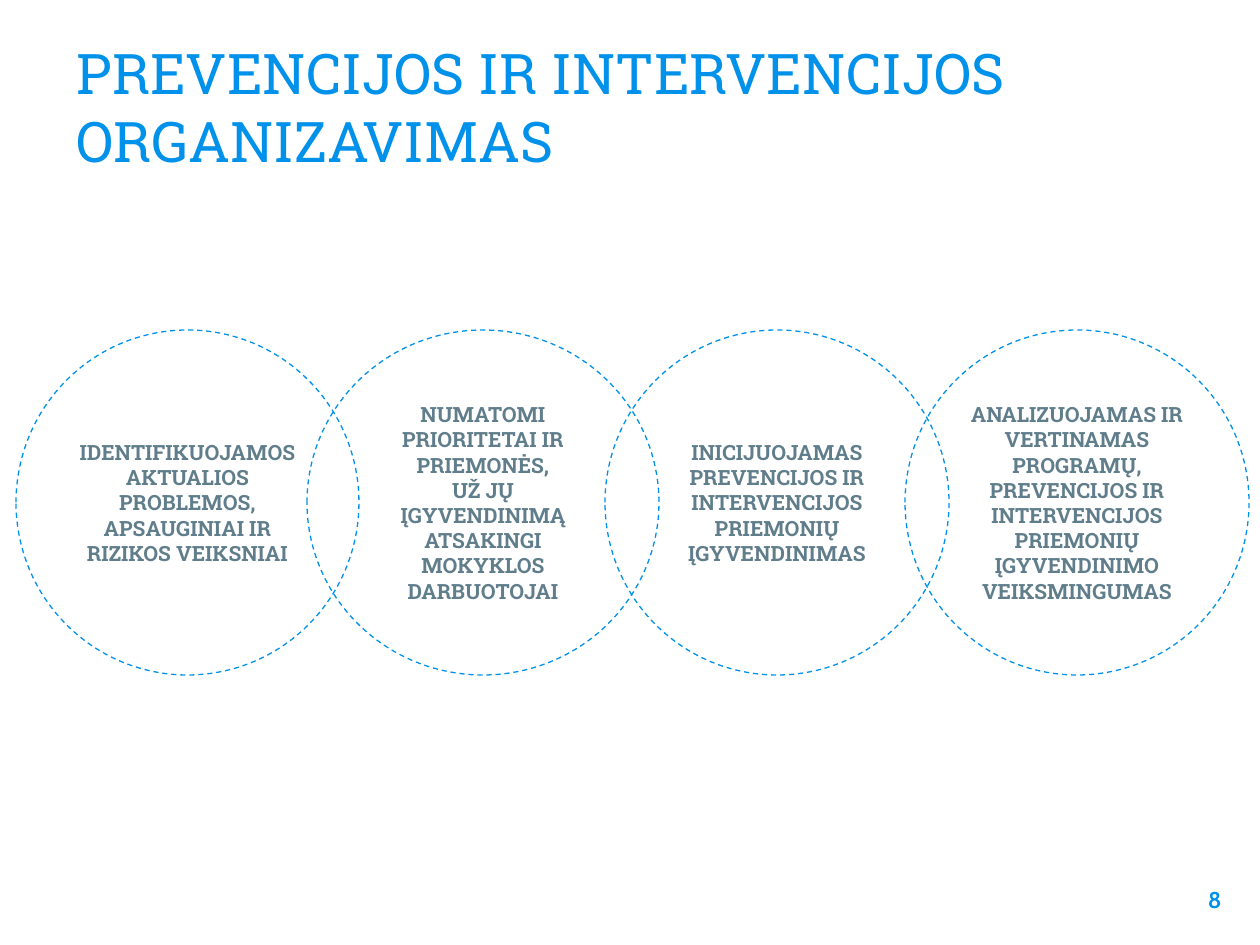
from pptx import Presentation
from pptx.dml.color import RGBColor
from pptx.enum.dml import MSO_LINE
from pptx.enum.shapes import MSO_SHAPE
from pptx.enum.text import MSO_ANCHOR, MSO_AUTO_SIZE, PP_ALIGN
from pptx.util import Emu, Pt

BLUE = RGBColor(0x00, 0x91, 0xEA)
GREY = RGBColor(0x60, 0x7D, 0x8B)
SERIF, SANS = "Roboto Slab", "Cabin"
LEFT, CENTER, RIGHT = PP_ALIGN.LEFT, PP_ALIGN.CENTER, PP_ALIGN.RIGHT
TOP, MIDDLE, BOTTOM = MSO_ANCHOR.TOP, MSO_ANCHOR.MIDDLE, MSO_ANCHOR.BOTTOM
TITLE_ONLY = 5

# Left edge and width of each circle, with its paragraphs
STEPS = [
    (16, 343, ["IDENTIFIKUOJAMOS AKTUALIOS PROBLEMOS, APSAUGINIAI IR RIZIKOS VEIKSNIAI"]),
    (307, 352, ["NUMATOMI PRIORITETAI IR PRIEMONĖS,",
                "UŽ JŲ ĮGYVENDINIMĄ ATSAKINGI MOKYKLOS DARBUOTOJAI"]),
    (605, 344, ["INICIJUOJAMAS PREVENCIJOS IR INTERVENCIJOS PRIEMONIŲ ĮGYVENDINIMAS"]),
    (905, 344, ["ANALIZUOJAMAS IR VERTINAMAS PROGRAMŲ, PREVENCIJOS IR INTERVENCIJOS "
                "PRIEMONIŲ ĮGYVENDINIMO VEIKSMINGUMAS"]),
]


def px(n):
    return Emu(round(n * 914400 / 126))


def write(sp, paragraphs, size, color, font=SERIF, bold=False, align=LEFT, anchor=TOP):
    tf = sp.text_frame
    tf.word_wrap = True
    tf.auto_size = MSO_AUTO_SIZE.NONE
    tf.vertical_anchor = anchor
    tf.margin_left = tf.margin_right = tf.margin_top = tf.margin_bottom = Pt(7.2)
    tf.text = "\n".join(paragraphs)
    for p in tf.paragraphs:
        p.alignment = align
        p.font.name = font
        p.font.size = Pt(size)
        p.font.bold = bold
        p.font.color.rgb = color


def add_title(s, x, y, w, h):
    sp = s.shapes.title
    sp.left, sp.top, sp.width, sp.height = map(px, (x, y, w, h))
    write(sp, ["PREVENCIJOS IR INTERVENCIJOS ORGANIZAVIMAS"], 32, BLUE, anchor=BOTTOM)


def add_page_number(s, x, y, w, h):
    sp = s.shapes.add_textbox(*map(px, (x, y, w, h)))
    write(sp, ["8"], 13, BLUE, font=SANS, bold=True, align=RIGHT)


def add_step_circles(s, y, h):
    for x, w, paragraphs in STEPS:
        sp = s.shapes.add_shape(MSO_SHAPE.OVAL, *map(px, (x, y, w, h)))
        sp.shadow.inherit = False
        sp.fill.background()
        sp.line.color.rgb = BLUE
        sp.line.width = Pt(0.75)
        sp.line.dash_style = MSO_LINE.DASH
        write(sp, paragraphs, 12, GREY, bold=True, align=CENTER, anchor=MIDDLE)


def main():
    prs = Presentation()
    prs.slide_width, prs.slide_height = px(1260), px(945)
    s = prs.slides.add_slide(prs.slide_layouts[TITLE_ONLY])
    add_title(s, 64, 45, 1087, 141)
    add_page_number(s, 1158, 873, 76, 72)
    add_step_circles(s, 330, 345)
    prs.save("out.pptx")


if __name__ == "__main__":
    main()
